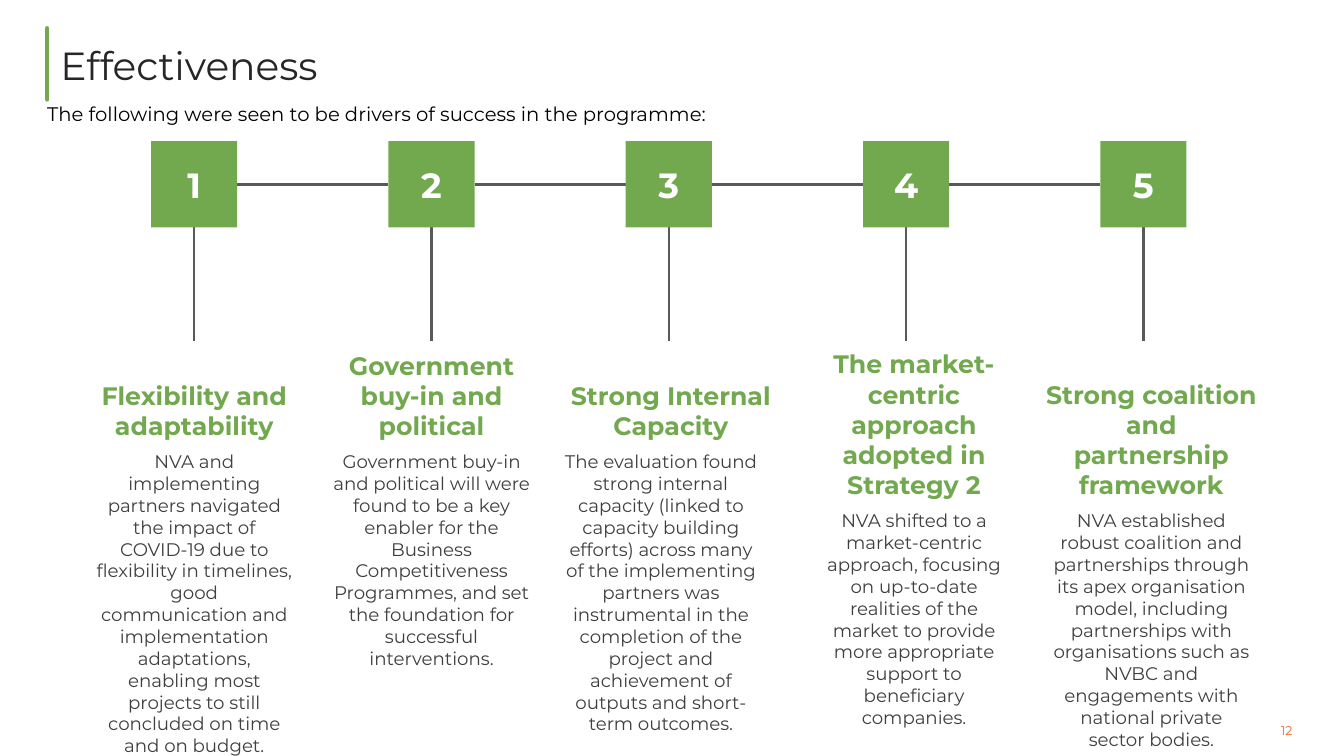
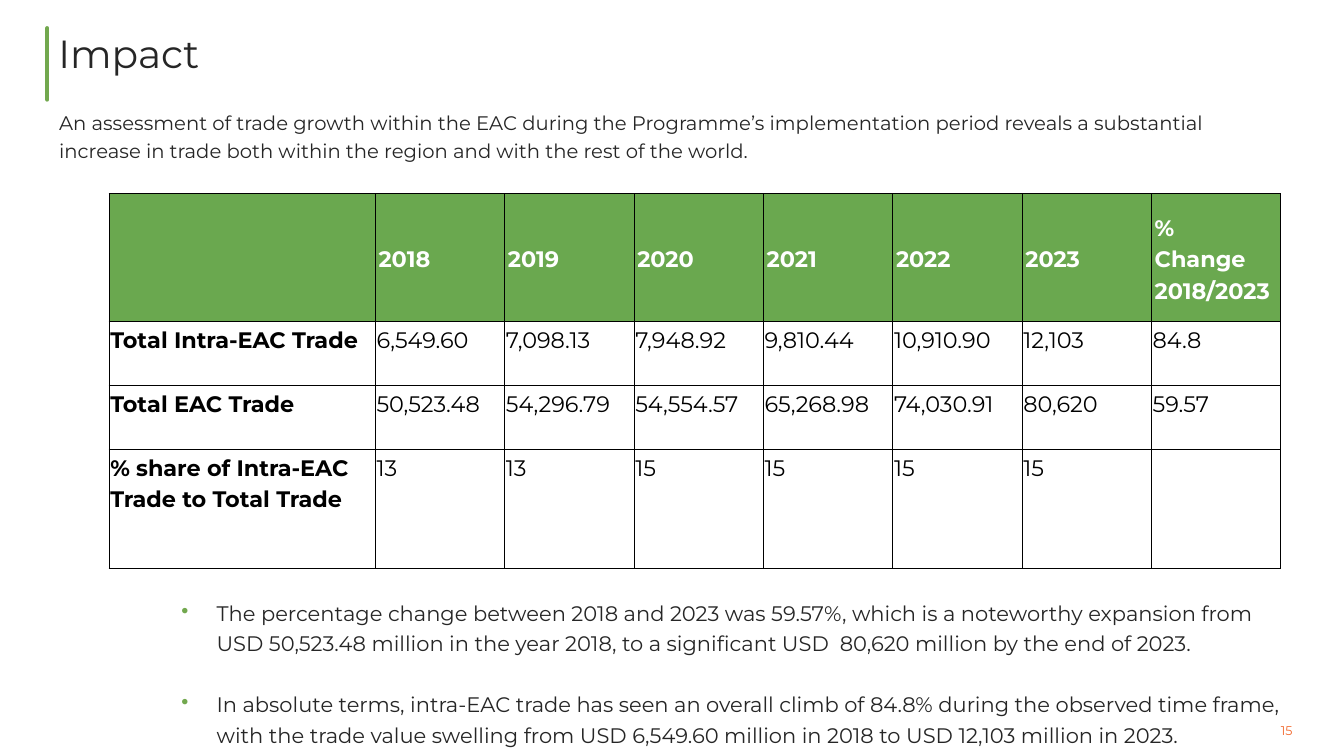
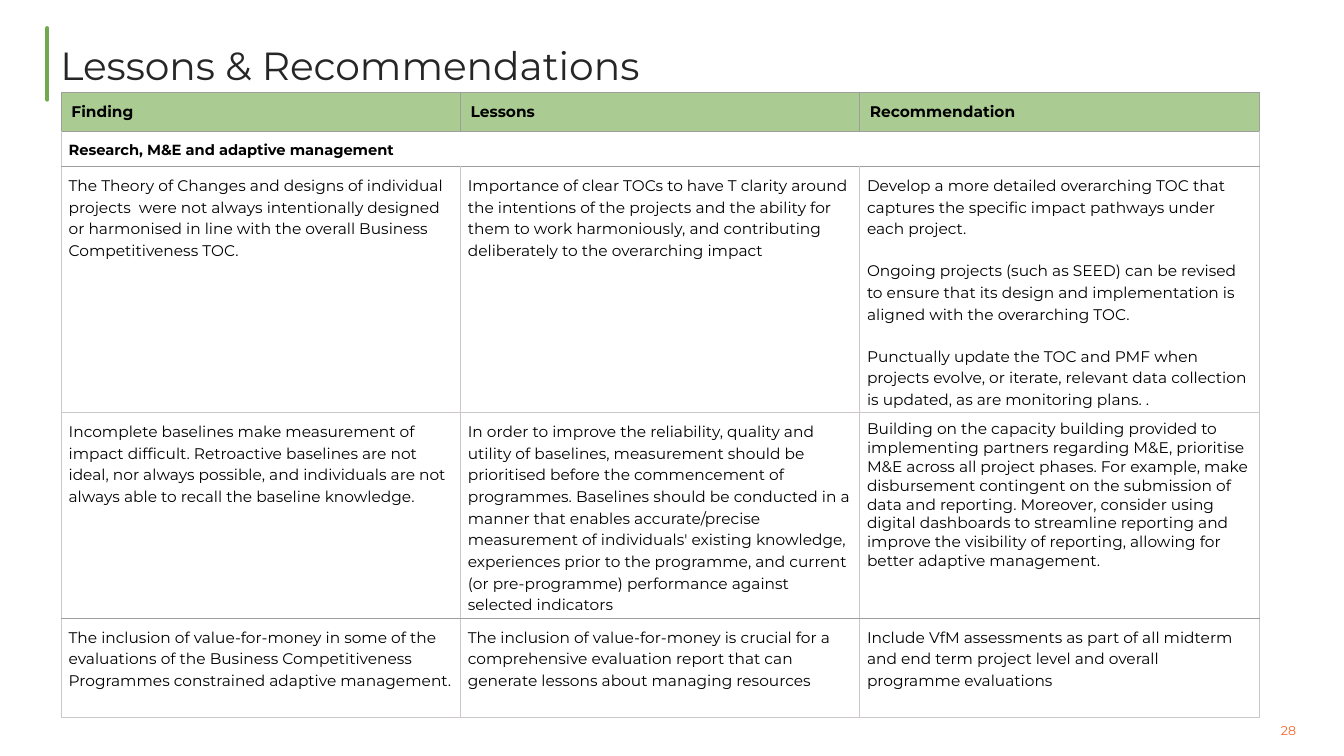
from dataclasses import dataclass, replace
from itertools import pairwise
from typing import Sequence

from lxml.etree import SubElement
from pptx import Presentation
from pptx.dml.color import RGBColor
from pptx.enum.shapes import MSO_CONNECTOR as Conn, MSO_SHAPE as Shape
from pptx.enum.text import MSO_ANCHOR as Anchor, PP_ALIGN as Align
from pptx.oxml import parse_xml
from pptx.oxml.ns import nsdecls, qn
from pptx.util import Cm, Pt

# Shared look
FONT = "Montserrat"
GREEN, TABLE_GREEN, PALE_GREEN = "72A84E", "6AA84F", "AACC92"
ORANGE, WHITE, BLACK = "F2672B", "FFFFFF", "000000"
INK, BODY_GREY, LINE_GREY = "262626", "3F3F3F", "595959"
RULE_DARK, RULE_LIGHT = "9E9E9E", "CBC8C7"


@dataclass(frozen=True)
class Style:
    size: float
    color: str = BLACK
    bold: bool = False
    align: Align = Align.LEFT
    spacing: float = 1.0
    gap: float = 0  # points between paragraphs


@dataclass(frozen=True)
class Box:
    left: float
    top: float
    width: float
    height: float


@dataclass(frozen=True)
class Step:
    heading: str
    text: str
    heading_width: float
    heading_shift: float = 0
    text_shift: float = 0
    drop: float = 0


TITLE = Style(28, INK)
PAGE_NUMBER = Style(9, ORANGE)
STEP_NUMBER = Style(25, WHITE, True, Align.CENTER)
STEP_HEADING = Style(18, GREEN, True, Align.CENTER)
STEP_TEXT = Style(13, BODY_GREY, align=Align.CENTER)
TITLE_BOX = Box(1.27, 0.74, 31.39, 1.78)


def rgb(value: str) -> RGBColor:
    return RGBColor.from_string(value)


# Drawing helpers
def write(tf, lines: Sequence[str], style: Style) -> None:
    for i, line in enumerate(lines):
        p = tf.paragraphs[0] if i == 0 else tf.add_paragraph()
        p.text = line
        p.alignment = style.align
        p.line_spacing = style.spacing
        if i:
            p.space_before = Pt(style.gap)
        for r in p.runs:
            r.font.name = FONT
            r.font.size = Pt(style.size)
            r.font.bold = style.bold
            r.font.color.rgb = rgb(style.color)


def add_text(s, box: Box, lines: Sequence[str], style: Style,
             anchor: Anchor = Anchor.TOP, inset_x: float = 0.25, inset_y: float = 0.25):
    sp = s.shapes.add_textbox(Cm(box.left), Cm(box.top), Cm(box.width), Cm(box.height))
    tf = sp.text_frame
    tf.word_wrap = True
    tf.vertical_anchor = anchor
    tf.margin_left = tf.margin_right = Cm(inset_x)
    tf.margin_top = tf.margin_bottom = Cm(inset_y)
    write(tf, lines, style)
    return tf


def add_line(s, x1: float, y1: float, x2: float, y2: float,
             color: str = LINE_GREY, width: float = 1.75):
    line = s.shapes.add_connector(Conn.STRAIGHT, Cm(x1), Cm(y1), Cm(x2), Cm(y2))
    line.line.color.rgb = rgb(color)
    line.line.width = Pt(width)
    SubElement(line._element.spPr, qn("a:effectLst"))
    return line


def add_bullets(tf, color: str, indent: float, hanging: float) -> None:
    for p in tf.paragraphs:
        pPr = p._p.get_or_add_pPr()
        pPr.set("marL", str(Cm(indent)))
        pPr.set("indent", str(-Cm(hanging)))
        bullet_color = SubElement(pPr, qn("a:buClr"))
        SubElement(bullet_color, qn("a:srgbClr")).set("val", color)
        SubElement(pPr, qn("a:buChar")).set("char", "•")


def set_borders(cell, side: str, top: str, bottom: str) -> None:
    tcPr = cell._tc.get_or_add_tcPr()
    for i, (edge, color) in enumerate(zip("LRTB", (side, side, top, bottom))):
        tcPr.insert(i, parse_xml(
            f'<a:ln{edge} {nsdecls("a")} w="{Pt(0.75)}"><a:solidFill>'
            f'<a:srgbClr val="{color}"/></a:solidFill></a:ln{edge}>'))


def fill_cell(cell, lines: Sequence[str], style: Style, inset: float,
              fill: str = "", anchor: Anchor = Anchor.TOP) -> None:
    if fill:
        cell.fill.solid()
        cell.fill.fore_color.rgb = rgb(fill)
    else:
        cell.fill.background()
    cell.vertical_anchor = anchor
    cell.margin_left = cell.margin_right = Cm(inset)
    cell.margin_top = cell.margin_bottom = Cm(inset)
    write(cell.text_frame, lines, style)


def add_grid(s, left: float, top: float, widths: Sequence[float], heights: Sequence[float]):
    table = s.shapes.add_table(len(heights), len(widths), Cm(left), Cm(top),
                               Cm(sum(widths)), Cm(sum(heights))).table
    table.first_row = table.horz_banding = False
    for column, width in zip(table.columns, widths):
        column.width = Cm(width)
    for row, height in zip(table.rows, heights):
        row.height = Cm(height)
    return table


def add_slide(prs, title: str, number: int, title_box: Box = TITLE_BOX):
    s = prs.slides.add_slide(prs.slide_layouts[6])
    accent = add_line(s, 1.19, 0.71, 1.19, 2.51, GREEN, 3)
    accent._element.spPr.find(qn("a:ln")).set("cap", "rnd")
    add_text(s, title_box, [title], TITLE, Anchor.MIDDLE, inset_y=0.13)
    add_text(s, Box(32.28, 18.21, 1.83, 0.38), [str(number)], PAGE_NUMBER,
             Anchor.BOTTOM, 0, 0)
    return s


# Slide: drivers of success
STEPS = [
    Step("Flexibility and adaptability",
         "NVA and implementing partners navigated the impact of COVID-19 due to flexibility "
         "in timelines, good communication and implementation adaptations, enabling most "
         "projects to still concluded on time and on budget.", 6.32),
    Step("Government buy-in and political",
         "Government buy-in and political will were found to be a key enabler for the "
         "Business Competitiveness Programmes, and set the foundation for successful "
         "interventions.", 5.46),
    Step("Strong Internal Capacity",
         "The evaluation found strong internal capacity (linked to capacity building efforts) "
         "across many of the implementing partners was instrumental in the completion of the "
         "project and achievement of outputs and short-term outcomes.", 5.97, 0.05, -0.2),
    Step("The market-centric approach adopted in Strategy 2",
         "NVA shifted to a market-centric approach, focusing on up-to-date realities of the "
         "market to provide more appropriate support to beneficiary companies.",
         5.82, 0.2, 0.2, 1.49),
    Step("Strong coalition and partnership framework",
         "NVA established robust coalition and partnerships through its apex organisation "
         "model, including partnerships with organisations such as NVBC and engagements with "
         "national private sector bodies.", 5.82, 0.2, 0.2, 1.49),
]


def build_effectiveness(prs) -> None:
    s = add_slide(prs, "Effectiveness", 12)
    add_text(s, Box(0.94, 2.31, 32.23, 1.12),
             ["The following were seen to be drivers of success in the programme:"], Style(14))

    side, top, pitch, text_width = 2.17, 3.56, 5.98, 5.46
    lefts = [3.81 + i * pitch for i in range(len(STEPS))]
    for left, following in pairwise(lefts):
        add_line(s, left + side, top + side / 2, following, top + side / 2)

    for i, (left, step) in enumerate(zip(lefts, STEPS), 1):
        center = left + side / 2
        add_line(s, center, top + side, center, 8.59)
        sp = s.shapes.add_shape(Shape.RECTANGLE, Cm(left), Cm(top), Cm(side), Cm(side))
        sp.shadow.inherit = False
        sp.fill.solid()
        sp.fill.fore_color.rgb = rgb(GREEN)
        sp.line.fill.background()
        sp.text_frame.vertical_anchor = Anchor.MIDDLE
        write(sp.text_frame, [str(i)], STEP_NUMBER)
        add_text(s, Box(center + step.heading_shift - step.heading_width / 2,
                        8.59 + step.drop, step.heading_width, 2.77),
                 [step.heading], STEP_HEADING, Anchor.BOTTOM)
        add_text(s, Box(center + step.text_shift - text_width / 2,
                        11.1 + step.drop, text_width, 3.1), [step.text], STEP_TEXT)


# Slide: trade growth
TRADE = [
    ["", "2018", "2019", "2020", "2021", "2022", "2023", "%  Change\n2018/2023"],
    ["Total Intra-EAC Trade", "6,549.60", "7,098.13", "7,948.92", "9,810.44", "10,910.90",
     "12,103", "84.8"],
    ["Total EAC Trade", "50,523.48", "54,296.79", "54,554.57", "65,268.98", "74,030.91",
     "80,620", "59.57"],
    ["% share of Intra-EAC Trade to Total Trade", "13", "13", "15", "15", "15", "15", ""],
]
TRADE_NOTES = [
    "The percentage change between 2018 and 2023 was 59.57%, which is a noteworthy expansion "
    "from USD 50,523.48 million in the year 2018, to a significant USD  80,620 million by the "
    "end of 2023.",
    "In absolute terms, intra-EAC trade has seen an overall climb of 84.8% during the observed "
    "time frame, with the trade value swelling from USD 6,549.60 million in 2018 to USD 12,103 "
    "million in 2023.",
]


def build_impact(prs) -> None:
    s = add_slide(prs, "Impact", 15, replace(TITLE_BOX, left=1.22, top=0.43))
    tf = add_text(s, Box(1.24, 2.21, 31.39, 2.36),
                  ["An assessment of trade growth within the EAC during the Programme’s "
                   "implementation period reveals a substantial increase in trade both within "
                   "the region and with the rest of the world."],
                  Style(14, INK, spacing=1.2), Anchor.MIDDLE, inset_y=0.13)
    tf.paragraphs[0].space_before = Pt(3.7)
    tf.paragraphs[0].space_after = Pt(9.7)

    table = add_grid(s, 2.75, 4.88, [6.71] + [3.26] * 7, [3.23, 1.61, 1.61, 3.0])
    figure = Style(16, spacing=1.15)
    label = replace(figure, bold=True)
    for i, row in enumerate(TRADE):
        for j, value in enumerate(row):
            cell = table.cell(i, j)
            if i == 0:
                fill_cell(cell, value.split("\n"), replace(label, color=WHITE), 0.08,
                          TABLE_GREEN, Anchor.MIDDLE)
            else:
                fill_cell(cell, [value], figure if j else label, 0.03)
            set_borders(cell, BLACK, BLACK, BLACK)

    notes = add_text(s, Box(3.94, 14.88, 28.75, 4.1), TRADE_NOTES,
                     Style(15, INK, spacing=1.2, gap=22), inset_y=0.13)
    add_bullets(notes, GREEN, 1.27, 0.89)


# Slide: lessons table
LESSONS = [
    [["Finding"], ["Lessons"], ["Recommendation"]],
    [["Research, M&E and adaptive management"]],
    [["The Theory of Changes and designs of individual projects  were not always "
      "intentionally designed or harmonised in line with the overall Business "
      "Competitiveness TOC."],
     ["Importance of clear TOCs to have T clarity around the intentions of the projects and "
      "the ability for them to work harmoniously, and contributing deliberately to the "
      "overarching impact"],
     ["Develop a more detailed overarching TOC that captures the specific impact pathways "
      "under each project.",
      "Ongoing projects (such as SEED) can be revised to ensure that its design and "
      "implementation is aligned with the overarching TOC.",
      "Punctually update the TOC and PMF when projects evolve, or iterate, relevant data "
      "collection is updated, as are monitoring plans. ."]],
    [["Incomplete baselines make measurement of impact difficult. Retroactive baselines are "
      "not ideal, nor always possible, and individuals are not always able to recall the "
      "baseline knowledge."],
     ["In order to improve the reliability, quality and utility of baselines, measurement "
      "should be prioritised before the commencement of programmes. Baselines should be "
      "conducted in a manner that enables accurate/precise measurement of individuals' "
      "existing knowledge, experiences prior to the programme, and current (or "
      "pre-programme) performance against selected indicators"],
     ["Building on the capacity building provided to implementing partners regarding M&E, "
      "prioritise M&E across all project phases. For example, make disbursement contingent "
      "on the submission of data and reporting. Moreover, consider using digital dashboards "
      "to streamline reporting and improve the visibility of reporting, allowing for better "
      "adaptive management."]],
    [["The inclusion of value-for-money in some of the evaluations of the Business "
      "Competitiveness Programmes constrained adaptive management."],
     ["The inclusion of value-for-money is crucial for a comprehensive evaluation report "
      "that can generate lessons about managing resources"],
     ["Include VfM assessments as part of all midterm and end term project level and overall "
      "programme evaluations"]],
]


def build_lessons(prs) -> None:
    s = add_slide(prs, "Lessons & Recommendations", 28)
    table = add_grid(s, 1.55, 2.34, [10.06] * 3, [0.97, 0.89, 6.15, 5.16, 2.5])
    table.cell(1, 0).merge(table.cell(1, 2))

    header = Style(11, bold=True)
    section = Style(10.5, bold=True, spacing=1.15)
    text = Style(11, spacing=1.15, gap=14.5)
    row_styles = [header, section, text, text, text]
    rules = [RULE_DARK, RULE_DARK, RULE_DARK, RULE_LIGHT, RULE_DARK, RULE_LIGHT]
    for i, (row, style) in enumerate(zip(LESSONS, row_styles)):
        for j, lines in enumerate(row):
            cell = table.cell(i, j)
            if i == 0:
                fill_cell(cell, lines, style, 0.25, PALE_GREEN)
            else:
                tight = (i, j) == (3, 2)
                fill_cell(cell, lines, replace(style, spacing=1.0) if tight else style, 0.18)
            set_borders(cell, RULE_LIGHT if i else RULE_DARK, rules[i], rules[i + 1])


def main() -> None:
    prs = Presentation()
    prs.slide_width, prs.slide_height = Cm(33.87), Cm(19.05)
    build_effectiveness(prs)
    build_impact(prs)
    build_lessons(prs)
    prs.save("out.pptx")


if __name__ == "__main__":
    main()
